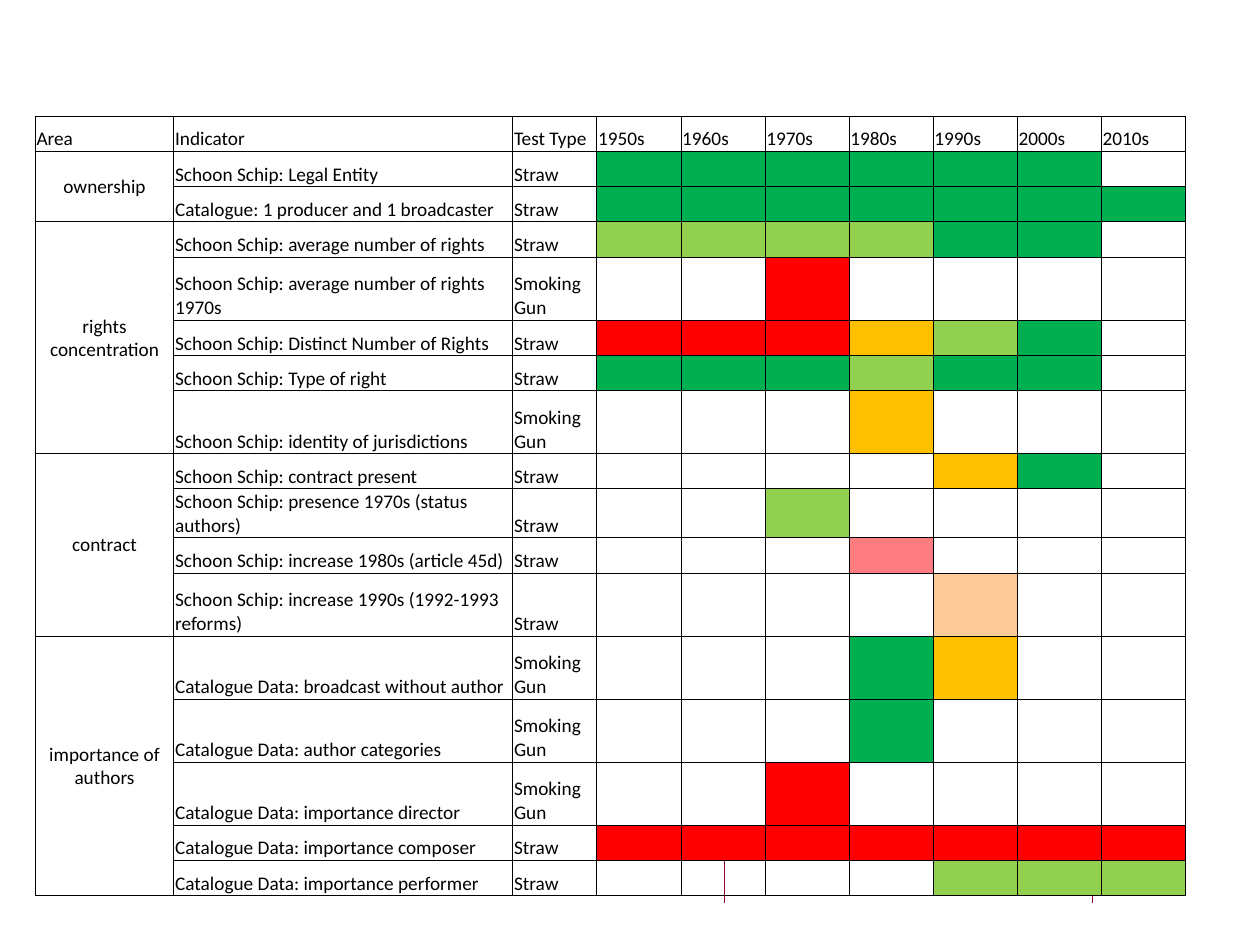
from dataclasses import dataclass

from lxml import etree
from pptx import Presentation
from pptx.dml.color import RGBColor
from pptx.enum.shapes import MSO_CONNECTOR
from pptx.enum.text import MSO_ANCHOR, PP_ALIGN
from pptx.oxml.ns import qn
from pptx.util import Inches, Pt

STRAIGHT = MSO_CONNECTOR.STRAIGHT
BOTTOM, MIDDLE = MSO_ANCHOR.BOTTOM, MSO_ANCHOR.MIDDLE
LEFT, CENTER = PP_ALIGN.LEFT, PP_ALIGN.CENTER


@dataclass(frozen=True)
class Theme:
    font: str = "Calibri"
    size: float = 11
    text: str = "000000"
    border: str = "000000"
    border_width: float = 0.5
    rule: str = "90003E"
    rule_width: float = 0.75


THEME = Theme()

# One letter per decade; a dot is an empty cell
RATINGS = {
    "G": "00B050",  # green
    "L": "92D050",  # light green
    "A": "FFC000",  # amber
    "O": "FFCC99",  # pale orange
    "P": "FF7C80",  # pink
    "R": "FF0000",  # red
}

HEADERS = ["Area", "Indicator", "Test Type"] + [f"{year}s" for year in range(1950, 2020, 10)]
SHORT, TALL = 0.28, 0.5
STRAW, GUN = "Straw", "Smoking Gun"

# Area: (indicator, test type, ratings, row height)
AREAS = {
    "ownership": [
        ("Schoon Schip: Legal Entity", STRAW, "GGGGGG.", SHORT),
        ("Catalogue: 1 producer and 1 broadcaster", STRAW, "GGGGGGG", SHORT),
    ],
    "rights concentration": [
        ("Schoon Schip: average number of rights", STRAW, "LLLLGG.", SHORT),
        ("Schoon Schip: average number of rights 1970s", GUN, "..R....", TALL),
        ("Schoon Schip: Distinct Number of Rights", STRAW, "RRRALG.", SHORT),
        ("Schoon Schip: Type of right", STRAW, "GGGLGG.", SHORT),
        ("Schoon Schip: identity of jurisdictions", GUN, "...A...", TALL),
    ],
    "contract": [
        ("Schoon Schip: contract present", STRAW, "....AG.", SHORT),
        ("Schoon Schip: presence 1970s (status authors)", STRAW, "..L....", SHORT),
        ("Schoon Schip: increase 1980s (article 45d)", STRAW, "...P...", SHORT),
        ("Schoon Schip: increase 1990s (1992-1993 reforms)", STRAW, "....O..", TALL),
    ],
    "importance of authors": [
        ("Catalogue Data: broadcast without author", GUN, "...GA..", TALL),
        ("Catalogue Data: author categories", GUN, "...G...", TALL),
        ("Catalogue Data: importance director", GUN, "..R....", TALL),
        ("Catalogue Data: importance composer", STRAW, "RRRRRRR", SHORT),
        ("Catalogue Data: importance performer", STRAW, "....LLL", SHORT),
    ],
}


def add_footer_rules(slide, positions, top, height):
    """Short vertical rules in the footer."""
    for left in positions:
        line = slide.shapes.add_connector(
            STRAIGHT, Inches(left), Inches(top), Inches(left), Inches(top + height))
        line.line.color.rgb = RGBColor.from_string(THEME.rule)
        line.line.width = Pt(THEME.rule_width)
        etree.SubElement(line._element.spPr, qn("a:effectLst"))


def format_cell(cell, fill=None):
    """Insets, borders and fill; borders must precede the fill in the XML."""
    cell.margin_left = cell.margin_right = cell.margin_top = Inches(0.01)
    cell.margin_bottom = 0
    cell.vertical_anchor = BOTTOM
    properties = cell._tc.get_or_add_tcPr()
    for side in ("a:lnL", "a:lnR", "a:lnT", "a:lnB"):
        border = etree.SubElement(properties, qn(side), w=str(Pt(THEME.border_width)))
        solid = etree.SubElement(border, qn("a:solidFill"))
        etree.SubElement(solid, qn("a:srgbClr"), val=THEME.border)
    if fill:
        cell.fill.solid()
        cell.fill.fore_color.rgb = RGBColor.from_string(fill)
    else:
        cell.fill.background()
    # Keeps empty cells from stretching their row
    etree.SubElement(cell.text_frame.paragraphs[0]._p, qn("a:endParaRPr"),
                     sz=str(int(THEME.size * 100)))


def write_cell(cell, text, align=LEFT, anchor=BOTTOM):
    cell.text_frame.text = text
    cell.vertical_anchor = anchor
    paragraph = cell.text_frame.paragraphs[0]
    paragraph.alignment = align
    font = paragraph.runs[0].font
    font.name, font.size = THEME.font, Pt(THEME.size)
    font.color.rgb = RGBColor.from_string(THEME.text)


def add_test_table(slide, left, top, width):
    """Indicators by area, rated per decade."""
    rows = [row for area_rows in AREAS.values() for row in area_rows]
    heights = [SHORT] + [row[3] for row in rows]
    table = slide.shapes.add_table(
        len(heights), len(HEADERS), Inches(left), Inches(top),
        Inches(width), Inches(sum(heights))).table
    table.first_row = table.horz_banding = False

    # Grid: two wide columns, the rest share what is left
    wide = [1.1, 2.69]
    narrow_count = len(HEADERS) - len(wide)
    widths = wide + [(width - sum(wide)) / narrow_count] * narrow_count
    for column, column_width in zip(table.columns, widths):
        column.width = Inches(column_width)
    for row, height in zip(table.rows, heights):
        row.height = Inches(height)

    # Header and first column
    for index, header in enumerate(HEADERS):
        format_cell(table.cell(0, index))
        write_cell(table.cell(0, index), header)

    # Indicator rows
    for row_index, (indicator, test_type, ratings, _) in enumerate(rows, start=1):
        fills = [None] * 3 + [RATINGS.get(rating) for rating in ratings]
        for column_index, fill in enumerate(fills):
            format_cell(table.cell(row_index, column_index), fill)
        write_cell(table.cell(row_index, 1), indicator)
        write_cell(table.cell(row_index, 2), test_type)

    # Area cells span their indicators
    first = 1
    for area, area_rows in AREAS.items():
        last = first + len(area_rows) - 1
        table.cell(first, 0).merge(table.cell(last, 0))
        write_cell(table.cell(first, 0), area, CENTER, MIDDLE)
        first = last + 1


def main():
    presentation = Presentation()
    presentation.slide_width, presentation.slide_height = Inches(10), Inches(7.5)
    slide = presentation.slides.add_slide(presentation.slide_layouts[6])
    add_footer_rules(slide, positions=(8.67, 5.75), top=6.83, height=0.34)
    add_test_table(slide, left=0.28, top=0.92, width=9.13)
    presentation.save("out.pptx")


if __name__ == "__main__":
    main()
